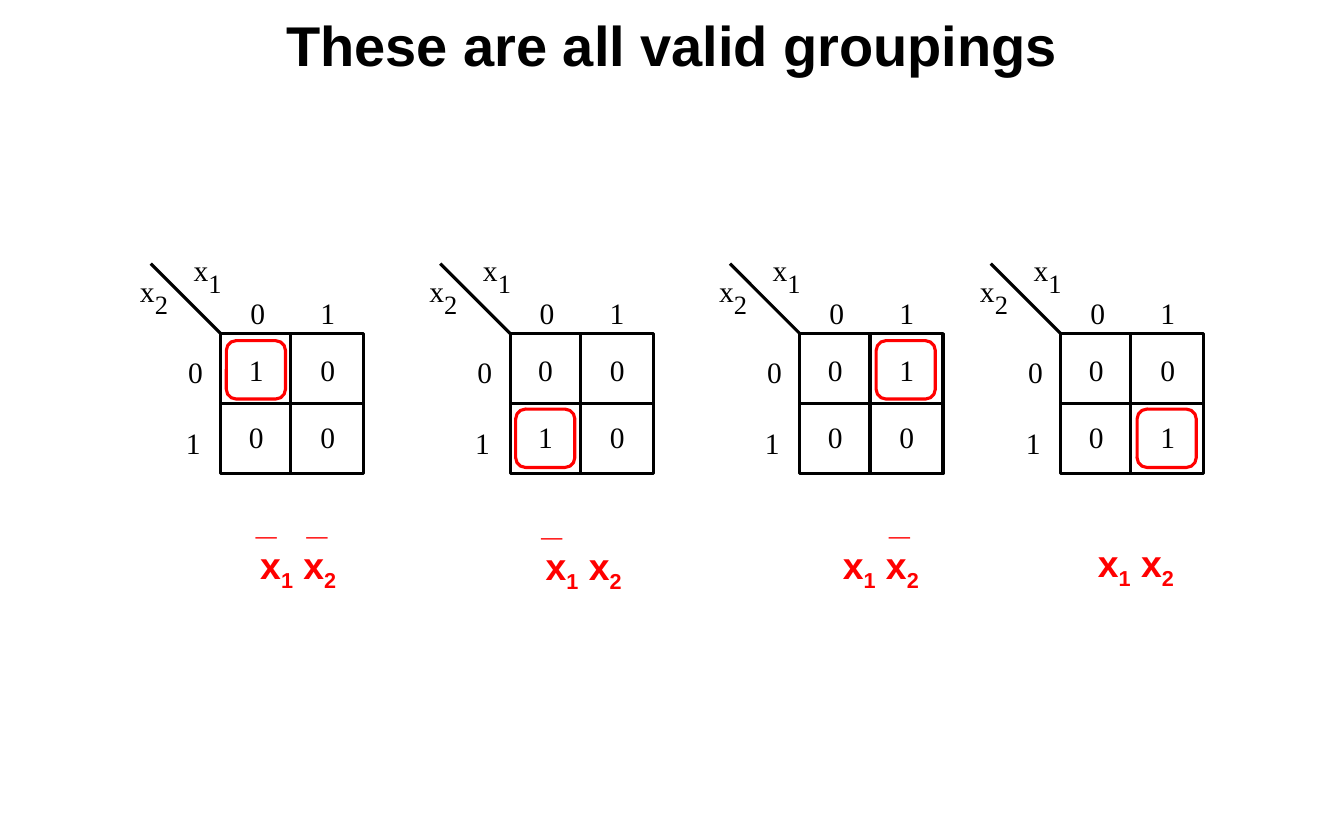
import lxml.etree
import pptx
import pptx.dml.color
import pptx.enum.shapes
import pptx.enum.text
import pptx.oxml.ns
import pptx.util

Pt = pptx.util.Pt
SHAPE = pptx.enum.shapes.MSO_SHAPE

COLORS = {"ink": "000000", "paper": "FFFFFF", "group": "FF0000"}
TITLE = "These are all valid groupings"

# Each map: left edge, (row, column) of its 1, place of its term, negated variables
MAPS = [
    {"left": 142, "one": (0, 0), "term": (131, 345), "negated": (0, 1)},
    {"left": 328, "one": (1, 0), "term": (314.5, 345.5), "negated": (0,)},
    {"left": 514.25, "one": (0, 1), "term": (505.5, 345), "negated": (1,)},
    {"left": 682, "one": (1, 1), "term": (669.5, 343.5), "negated": ()},
]
MAP_TOP, MAP_WIDTH, MAP_HEIGHT, DIVIDER = 214.5, 92, 90, 45

# Labels around each map: text, size, x and y from the map's top left corner
LABELS = [
    ("x", 19, -52, -39), ("2", 17, -42.5, -29),
    ("x", 19, -17.5, -52.5), ("1", 17, -8, -42.5),
    ("0", 19, -21, 13), ("1", 19, -22.5, 58.5),
    ("0", 19, 19, -25), ("1", 19, 64, -25),
]
CELL_X, CELL_Y = (18, 64), (11.5, 55)
RING_X, RING_Y = (3.5, 49), (4.5, 48.5)
TERM_RUNS = [("x", False), ("1", True), (" x", False), ("2", True)]
BAR_X, BAR_RISE = (26.5, 59), 29


def color(name):
    return pptx.dml.color.RGBColor.from_string(COLORS[name])


def add_run(paragraph, text, size, font_name, color_name, bold=False, subscript=False):
    run = paragraph.add_run()
    run.text = text
    run.font.size = Pt(size)
    run.font.name = font_name
    run.font.bold = bold
    run.font.color.rgb = color(color_name)
    if subscript:
        run.font._element.set("baseline", "-25000")


def add_text_box(shapes, left, top, width, height):
    box = shapes.add_textbox(Pt(left), Pt(top), Pt(width), Pt(height))
    box.text_frame.word_wrap = True
    box.text_frame.auto_size = pptx.enum.text.MSO_AUTO_SIZE.SHAPE_TO_FIT_TEXT
    return box.text_frame


def add_label(shapes, text, size, left, top, width):
    frame = add_text_box(shapes, left, top, width, size * 1.2)
    frame.word_wrap = False
    frame.margin_left = frame.margin_right = frame.margin_top = frame.margin_bottom = 0
    add_run(frame.paragraphs[0], text, size, "Times New Roman", "ink")


def add_outline(shapes, kind, left, top, width, height, line_color):
    shape = shapes.add_shape(kind, Pt(left), Pt(top), Pt(width), Pt(height))
    shape.shadow.inherit = False
    shape.fill.background()
    shape.line.color.rgb = color(line_color)
    shape.line.width = Pt(2)
    return shape


def add_line(shapes, x1, y1, x2, y2):
    line = shapes.add_connector(
        pptx.enum.shapes.MSO_CONNECTOR.STRAIGHT, Pt(x1), Pt(y1), Pt(x2), Pt(y2))
    line.line.color.rgb = color("ink")
    line.line.width = Pt(2)
    lxml.etree.SubElement(line._element.spPr, pptx.oxml.ns.qn("a:effectLst"))
    return line


def add_map(slide, left, one):
    shapes = slide.shapes.add_group_shape().shapes
    right, bottom = left + MAP_WIDTH, MAP_TOP + MAP_HEIGHT
    frame = add_outline(shapes, SHAPE.RECTANGLE, left, MAP_TOP, MAP_WIDTH, MAP_HEIGHT, "ink")
    frame.fill.solid()
    frame.fill.fore_color.rgb = color("paper")

    row_line = add_line(shapes, right, MAP_TOP + DIVIDER, left, MAP_TOP + DIVIDER)
    row_line.begin_connect(frame, 3)
    row_line.end_connect(frame, 1)
    add_line(shapes, left + DIVIDER, bottom, left + DIVIDER, MAP_TOP)
    add_line(shapes, left - DIVIDER, MAP_TOP - DIVIDER, left, MAP_TOP)

    for text, size, x, y in LABELS:
        add_label(shapes, text, size, left + x, MAP_TOP + y, 14.5 if size == 19 else 13)
    for row, y in enumerate(CELL_Y):
        for column, x in enumerate(CELL_X):
            value = "1" if (row, column) == one else "0"
            add_label(shapes, value, 19, left + x, MAP_TOP + y, 9.5)

    row, column = one
    add_outline(shapes, SHAPE.ROUNDED_RECTANGLE, left + RING_X[column],
                MAP_TOP + RING_Y[row], 38, 37.5, "group")


def add_term(slide, left, top, negated):
    """Write the product term and put a bar above each negated variable."""
    shapes = slide.shapes.add_group_shape().shapes if negated else slide.shapes
    paragraph = add_text_box(shapes, left, top, 121.5, 36.5).paragraphs[0]
    paragraph.alignment = pptx.enum.text.PP_ALIGN.CENTER
    for text, subscript in TERM_RUNS:
        add_run(paragraph, text, 24, "Arial", "group", True, subscript)
    for variable in negated:
        bar = add_text_box(shapes, left + BAR_X[variable], top - BAR_RISE, 25, 36.5)
        add_run(bar.paragraphs[0], "_", 24, "Arial", "group", True)


def add_title(slide):
    title = slide.shapes.title
    title.left, title.top, title.width, title.height = Pt(72), Pt(1.5), Pt(720), Pt(54)
    frame = title.text_frame
    frame.auto_size = pptx.enum.text.MSO_AUTO_SIZE.NONE
    frame.vertical_anchor = pptx.enum.text.MSO_ANCHOR.MIDDLE
    frame.paragraphs[0].alignment = pptx.enum.text.PP_ALIGN.CENTER
    add_run(frame.paragraphs[0], TITLE, 36, "Arial", "ink", True)


def main():
    presentation = pptx.Presentation()
    presentation.slide_width, presentation.slide_height = Pt(864), Pt(540)
    slide = presentation.slides.add_slide(presentation.slide_layouts[5])
    add_title(slide)
    for item in MAPS:
        add_map(slide, item["left"], item["one"])
        add_term(slide, *item["term"], item["negated"])
    presentation.save("out.pptx")


if __name__ == "__main__":
    main()
